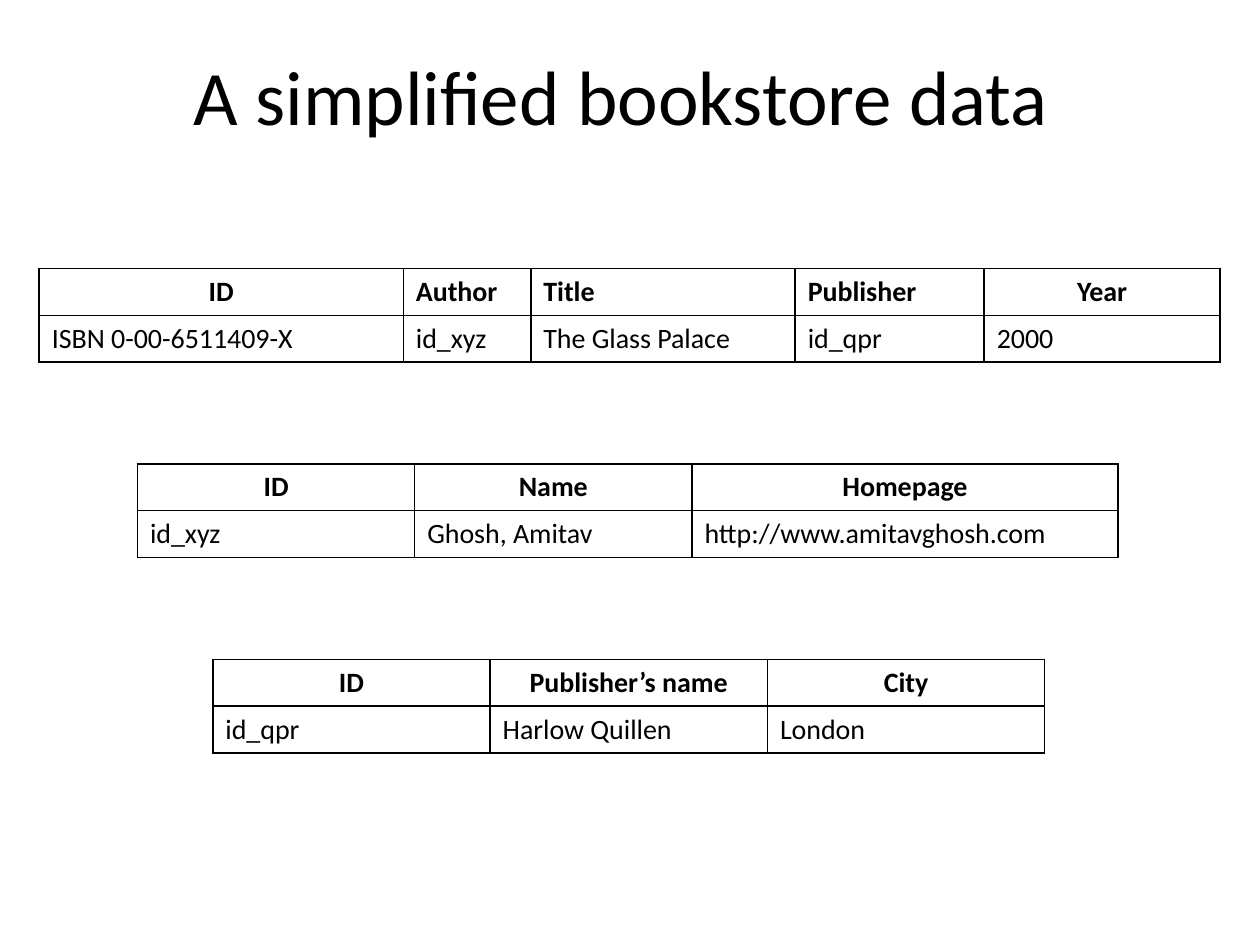
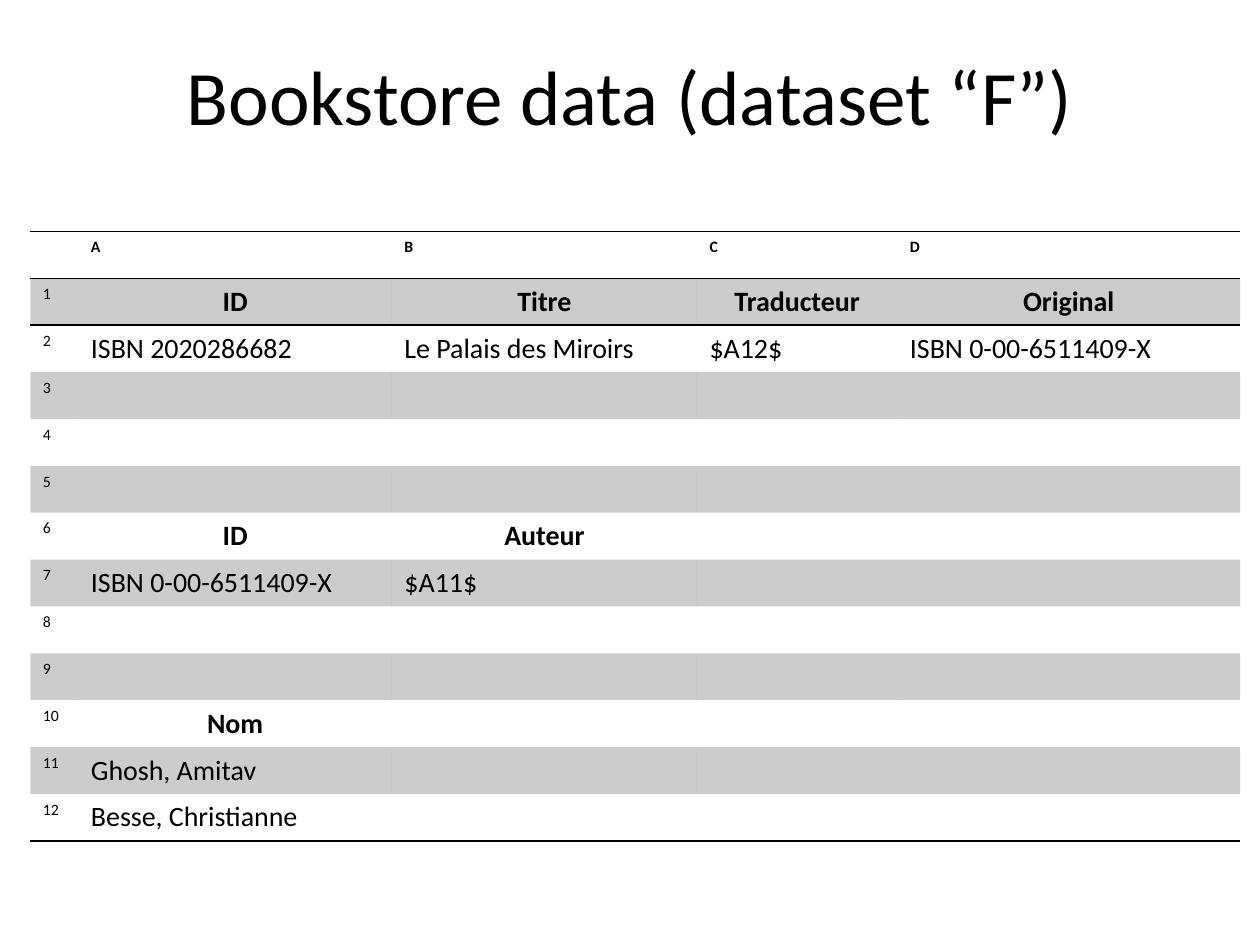
from lxml import etree
from pptx import Presentation
from pptx import util as u
from pptx.dml.color import RGBColor
from pptx.enum import text
from pptx.oxml.ns import qn

BLACK = RGBColor(0x00, 0x00, 0x00)
FONT = "Calibri"
TITLE_SIZE, BODY_SIZE, LABEL_SIZE = u.Pt(44), u.Pt(16), u.Pt(9)
BORDER = u.Pt(1)
BAND_OPACITY = 20  # percent of black
PLAIN_STYLE = "{2D5ABB26-0587-4C30-8999-92F81FD0307C}"  # no style, no grid
LEFT, CENTER = text.PP_ALIGN.LEFT, text.PP_ALIGN.CENTER

SLIDE_SIZE = u.Cm(25.4), u.Cm(19.05)
TITLE_BOX = {"left": u.Cm(1.27), "top": u.Cm(0.64),
             "width": u.Cm(22.86), "height": u.Cm(2.54)}
ROW_HEIGHT = 0.94

BOOKSTORE_TITLE = "A simplified bookstore data "
BOOKSTORE_TOP, BOOKSTORE_STEP = 5.41, 3.94
BOOKSTORE = [
    {"left": 0.79, "widths": [7.34, 2.57, 5.33, 3.81, 4.75],
     "left_heads": {"Author", "Title", "Publisher"},
     "rows": [["ID", "Author", "Title", "Publisher", "Year"],
              ["ISBN 0-00-6511409-X", "id_xyz", "The Glass Palace", "id_qpr", "2000"]]},
    {"left": 2.77, "widths": [5.59, 5.59, 8.59], "left_heads": set(),
     "rows": [["ID", "Name", "Homepage"],
              ["id_xyz", "Ghosh, Amitav", "http://www.amitavghosh.com"]]},
    {"left": 4.29, "widths": [5.59] * 3, "left_heads": set(),
     "rows": [["ID", "Publisher’s name", "City"],
              ["id_qpr", "Harlow Quillen", "London"]]},
]

DATASET_TITLE = "Bookstore data (dataset “F”)"
DATASET_LEFT, DATASET_TOP = 0.61, 4.67
DATASET_WIDTHS = [0.97, 6.32, 6.15, 4.04, 6.91]
DATASET_LETTERS = "ABCD"
DATASET_LENGTH = 12
DATASET_HEADS = {1, 6, 10}
DATASET = {
    1: ["ID", "Titre", "Traducteur", "Original"],
    2: ["ISBN 2020286682", "Le Palais des Miroirs", "$A12$", "ISBN 0-00-6511409-X"],
    6: ["ID", "Auteur"],
    7: ["ISBN 0-00-6511409-X", "$A11$"],
    10: ["Nom"],
    11: ["Ghosh, Amitav"],
    12: ["Besse, Christianne"],
}


def add_titled_slide(deck, wording):
    slide = deck.slides.add_slide(deck.slide_layouts[5])
    title = slide.shapes.title
    for name, value in TITLE_BOX.items():
        setattr(title, name, value)
    title.text_frame.vertical_anchor = text.MSO_ANCHOR.MIDDLE
    write(title.text_frame, wording, TITLE_SIZE, align=CENTER)
    return slide


def write(frame, wording, size, bold=False, align=LEFT):
    """Fill the first paragraph; an empty one still gets its line height."""
    paragraph = frame.paragraphs[0]
    paragraph.alignment = align
    if not wording:
        etree.SubElement(paragraph._p, qn("a:endParaRPr"), sz=str(int(size.pt * 100)))
        return
    run = paragraph.add_run()
    run.text = wording
    for name, value in {"name": FONT, "size": size, "bold": bold}.items():
        setattr(run.font, name, value)
    run.font.color.rgb = BLACK


def add_plain_table(slide, left, top, widths, row_count):
    table = slide.shapes.add_table(
        row_count, len(widths), u.Cm(left), u.Cm(top),
        u.Cm(sum(widths)), u.Cm(ROW_HEIGHT * row_count)).table
    table._tbl.tblPr.find(qn("a:tableStyleId")).text = PLAIN_STYLE
    table.horz_banding = False
    for column, width in zip(table.columns, widths):
        column.width = u.Cm(width)
    for row in table.rows:
        row.height = u.Cm(ROW_HEIGHT)
    return table


def style_cell(cell, sides, banded=False):
    """Draw borders on the given sides (of "LRTB"), then set the fill."""
    properties = cell._tc.get_or_add_tcPr()
    for side in sides:
        line = etree.SubElement(properties, qn(f"a:ln{side}"), w=str(BORDER))
        fill = etree.SubElement(line, qn("a:solidFill"))
        etree.SubElement(fill, qn("a:srgbClr"), val=str(BLACK))
    if not banded:
        cell.fill.background()
        return
    cell.fill.solid()
    cell.fill.fore_color.rgb = BLACK
    color = properties.find(qn("a:solidFill")).find(qn("a:srgbClr"))
    etree.SubElement(color, qn("a:alpha"), val=str(BAND_OPACITY * 1000))


def add_bookstore_slide(deck):
    slide = add_titled_slide(deck, BOOKSTORE_TITLE)
    for index, part in enumerate(BOOKSTORE):
        rows = part["rows"]
        table = add_plain_table(slide, part["left"], BOOKSTORE_TOP + index * BOOKSTORE_STEP,
                                part["widths"], len(rows))
        for r, row in enumerate(rows):
            for c, wording in enumerate(row):
                head = r == 0
                centred = head and wording not in part["left_heads"]
                cell = table.cell(r, c)
                style_cell(cell, "LRTB")
                write(cell.text_frame, wording, BODY_SIZE, head, CENTER if centred else LEFT)


def add_dataset_slide(deck):
    slide = add_titled_slide(deck, DATASET_TITLE)
    table = add_plain_table(slide, DATASET_LEFT, DATASET_TOP, DATASET_WIDTHS,
                            DATASET_LENGTH + 1)
    borders = {0: "TB", 1: "T", DATASET_LENGTH: "B"}
    for r in range(DATASET_LENGTH + 1):
        entries = DATASET.get(r, []) if r else list(DATASET_LETTERS)
        row = [str(r) if r else ""] + entries
        row += [""] * (len(DATASET_WIDTHS) - len(row))
        for c, wording in enumerate(row):
            cell = table.cell(r, c)
            style_cell(cell, borders.get(r, ""), banded=r % 2 == 1)
            label = r == 0 or c == 0
            head = r in DATASET_HEADS and not label
            write(cell.text_frame, wording, LABEL_SIZE if label else BODY_SIZE,
                  head or r == 0, CENTER if head else LEFT)


def main():
    deck = Presentation()
    deck.slide_width, deck.slide_height = SLIDE_SIZE
    add_bookstore_slide(deck)
    add_dataset_slide(deck)
    deck.save("out.pptx")


if __name__ == "__main__":
    main()
